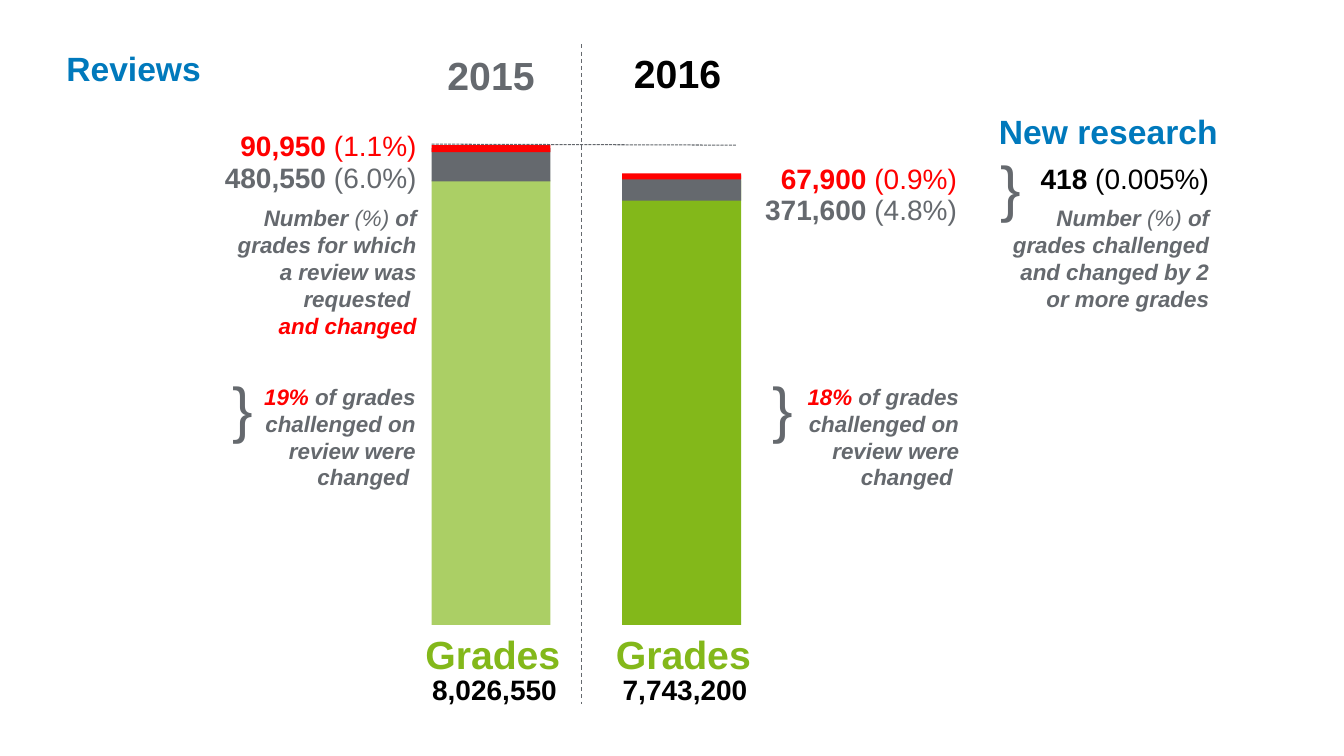
from lxml.etree import SubElement
from pptx import Presentation
from pptx.dml.color import RGBColor
from pptx.enum.dml import MSO_LINE
from pptx.enum.shapes import MSO_CONNECTOR, MSO_SHAPE
from pptx.enum.text import PP_ALIGN
from pptx.oxml.ns import qn
from pptx.util import Inches, Pt

HUES = {"green": "83B81A", "grey": "65696E", "red": "FF0000",
        "blue": "0079BC", "black": "000000", "slate": "63676C"}
LEFT, MID, RIGHT = PP_ALIGN.LEFT, PP_ALIGN.CENTER, PP_ALIGN.RIGHT


def hue(name):
    """Return the named colour."""
    return RGBColor.from_string(HUES[name])


def add_text(slide, box, paras, size, align=LEFT, italic=False):
    """Add a text box; each paragraph is a list of (text, colour, bold) runs."""
    frame = slide.shapes.add_textbox(*map(Inches, box)).text_frame
    frame.word_wrap = True
    for i, runs in enumerate(paras):
        para = frame.add_paragraph() if i else frame.paragraphs[0]
        para.alignment = align
        font = para.font
        font.name, font.size, font.italic = "Arial", Pt(size), italic
        shades = {shade for _, shade, _ in runs}
        weights = {bold for _, _, bold in runs}
        if len(shades) == 1:
            font.color.rgb = hue(runs[0][1])
        if len(weights) == 1:
            font.bold = runs[0][2]
        for text, shade, bold in runs:
            run = para.add_run()
            run.text = text
            if len(shades) > 1:
                run.font.color.rgb = hue(shade)
            if len(weights) > 1:
                run.font.bold = bold


def add_label(slide, box, text, shade, size, align=LEFT, bold=True):
    """Add a text box holding a single run."""
    add_text(slide, box, [[(text, shade, bold)]], size, align)


def add_bar(slide, left, top, height, shade, alpha=None):
    """Add one flat segment of a column."""
    bar = slide.shapes.add_shape(
        MSO_SHAPE.RECTANGLE, *map(Inches, (left, top, 1.18, height)))
    bar.shadow.inherit = False
    bar.fill.solid()
    bar.fill.fore_color.rgb = hue(shade)
    bar.line.fill.background()
    if alpha:
        tint = bar.fill._xPr.find(".//" + qn("a:srgbClr"))
        SubElement(tint, qn("a:alpha")).set("val", str(alpha * 1000))


def add_rule(slide, ends, shade, dash):
    """Add a thin dashed line."""
    rule = slide.shapes.add_connector(
        MSO_CONNECTOR.STRAIGHT, *map(Inches, ends))
    rule.line.color.rgb = hue(shade)
    rule.line.width = Pt(0.75)
    rule.line.dash_style = dash
    SubElement(rule._element.spPr, qn("a:effectLst"))


def add_year(slide, left, grey, red, total, alpha=None):
    """Add a stacked column with its caption and total."""
    add_bar(slide, left, 1.79, 4.41, "green", alpha)
    add_bar(slide, left, *grey, "grey")
    add_bar(slide, left, *red, "red")
    add_label(slide, (left - 0.16, 6.2, 1.65, 0.78), "Grades", "green", 28)
    add_label(slide, (left - 0.19, 6.62, 1.63, 0.44), total, "black", 20, MID)


def add_count(slide, right, top, count, share, shade):
    """Add a bold count and its share, ending at the right edge."""
    runs = [(count + " ", shade, True), (share, shade, False)]
    add_text(slide, (right - 2.39, top, 2.39, 0.44), [runs], 20, RIGHT)


def add_note(slide, right, top, width, height, paras):
    """Add an italic note, ending at the right edge."""
    box = (right - width, top, width, height)
    add_text(slide, box, paras, 16, RIGHT, True)


def add_brace(slide, left, top):
    """Add a large closing brace."""
    add_label(slide, (left, top, 0.47, 0.84), "}", "grey", 44, bold=False)


def add_rate(slide, right, brace, rate):
    """Add the share of challenged grades that changed."""
    text = " of grades challenged on review were changed "
    runs = [(rate, "red", True), (text, "grey", True)]
    add_note(slide, right, 3.75, 1.95, 1.18, [runs])
    add_brace(slide, brace, 3.62)


def main():
    """Build the slide and save it."""
    deck = Presentation()
    deck.slide_width, deck.slide_height = Inches(13.33), Inches(7.5)
    slide = deck.slides.add_slide(deck.slide_layouts[6])

    add_year(slide, 4.28, (1.47, 0.33), (1.44, 0.07), "8,026,550", 67)
    add_year(slide, 6.17, (1.74, 0.25), (1.72, 0.06), "7,743,200")
    add_rule(slide, (5.77, 0.44, 5.77, 6.98), "grey", MSO_LINE.DASH)
    add_rule(slide, (4.28, 1.43, 7.3, 1.44), "slate", MSO_LINE.SQUARE_DOT)

    add_label(slide, (0.56, 0.43, 3, 0.63), "Reviews", "blue", 24)
    add_label(slide, (9.81, 1.05, 2.66, 0.63), "New research", "blue", 24)
    add_label(slide, (4.29, 0.46, 1.16, 0.57), "2015", "grey", 28, MID)
    add_label(slide, (6.14, 0.44, 1.16, 0.57), "2016", "black", 28, MID)

    for right, top, count, share, shade in (
            (4.23, 1.23, "90,950", "(1.1%)", "red"),
            (4.23, 1.54, "480,550", "(6.0%)", "grey"),
            (9.59, 1.55, "67,900", "(0.9%)", "red"),
            (9.59, 1.86, "371,600", "(4.8%)", "grey"),
            (12.09, 1.55, "418", "(0.005%)", "black")):
        add_count(slide, right, top, count, share, shade)

    lead = [("Number ", "grey", True), ("(%) ", "grey", False)]
    asked = "of grades for which a review was requested "
    moved = "of grades challenged and changed by 2 or more grades"
    add_note(slide, 4.23, 1.98, 2, 1.45,
             [lead + [(asked, "grey", True)], [("and changed", "red", True)]])
    add_note(slide, 12.09, 1.98, 2.19, 1.18, [lead + [(moved, "grey", True)]])
    add_brace(slide, 9.82, 1.43)
    add_rate(slide, 4.22, 2.21, "19%")
    add_rate(slide, 9.61, 7.56, "18%")
    deck.save("out.pptx")


if __name__ == "__main__":
    main()
